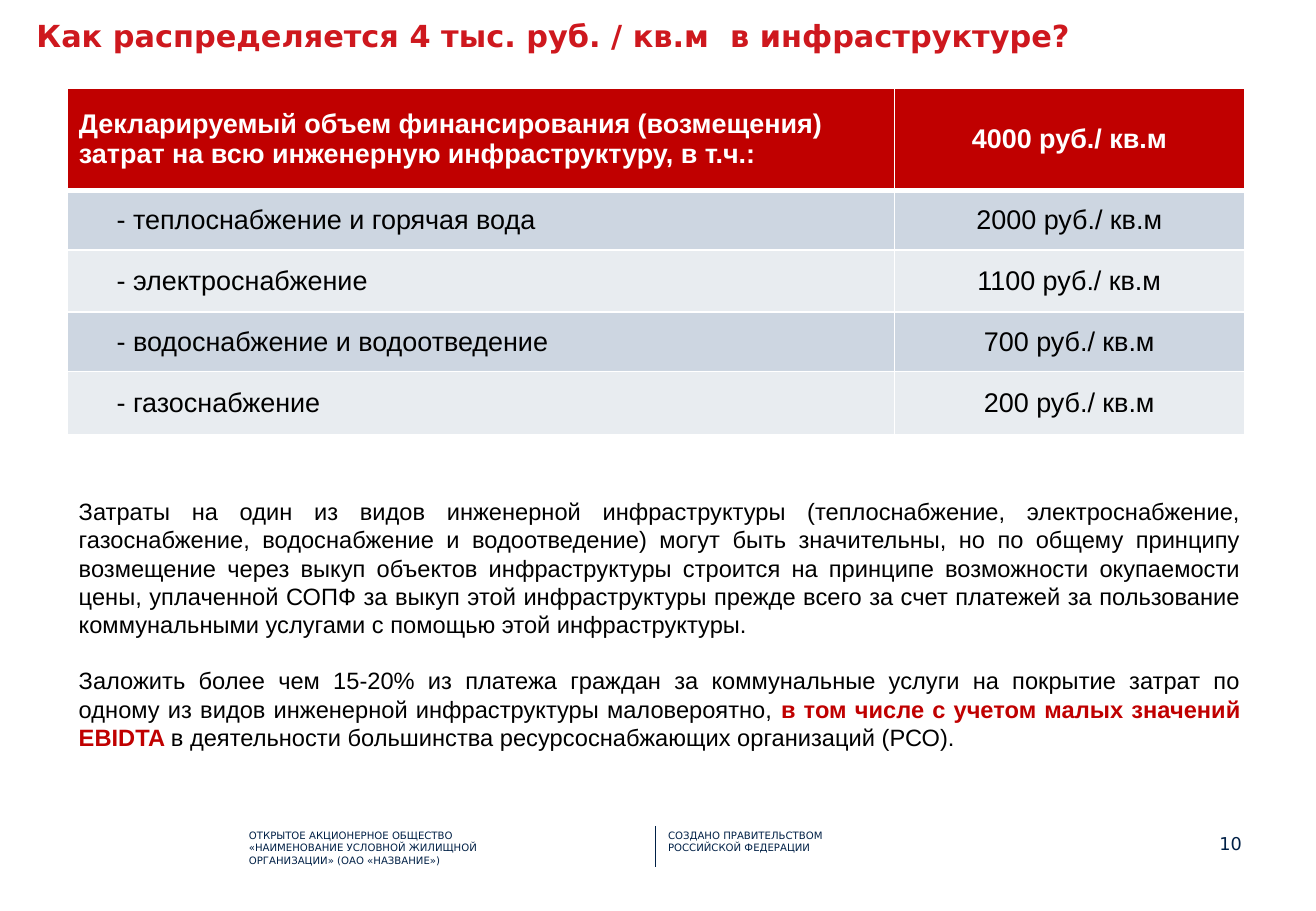
"""Build the slide on how 4 thousand roubles per square metre is split across infrastructure."""
from dataclasses import dataclass

from lxml.etree import SubElement
from pptx import Presentation
from pptx.dml.color import RGBColor
from pptx.enum.shapes import MSO_CONNECTOR
from pptx.enum.text import MSO_ANCHOR, PP_ALIGN as Align
from pptx.oxml.ns import qn
from pptx.util import Emu, Pt

PX = 9144


@dataclass(frozen=True)
class Theme:
    navy: str = "002046"
    title_red: str = "CE181E"
    red: str = "C00000"
    white: str = "FFFFFF"
    black: str = "000000"
    bands: tuple[str, str] = ("CDD6E1", "E8ECF0")
    head_font: str = "DejaVu Sans"
    body_font: str = "Arial"
    title_size: float = 18
    table_size: float = 16
    body_size: float = 14
    number_size: float = 10.5
    footer_size: float = 6


T = Theme()


@dataclass(frozen=True)
class Run:
    text: str
    color: str
    size: float
    font: str = T.head_font
    bold: bool = False


@dataclass(frozen=True)
class TextBox:
    left: int
    top: int
    width: int
    height: int
    paragraphs: tuple[tuple[Run, ...], ...]
    align: Align = Align.LEFT
    inset: tuple[int, int] = (10, 5)
    line_spacing: float = 1.0
    gap: float = 0


@dataclass(frozen=True)
class Row:
    label: str
    amount: str
    height: int


def px(n: int) -> Emu:
    return Emu(n * PX)


def body(text: str, color: str = T.black, bold: bool = False) -> Run:
    return Run(text, color, T.body_size, T.body_font, bold)


def footer(text: str) -> tuple[tuple[Run, ...], ...]:
    return ((Run(text, T.navy, T.footer_size),),)


TEXT_BOXES = (
    TextBox(30, 14, 999, 76, ((Run("Как распределяется 4 тыс. руб. / кв.м  в инфраструктуре?",
                                   T.title_red, T.title_size, bold=True),),), inset=(0, 0)),
    TextBox(55, 404, 976, 222, (
        (body("Затраты на один из видов инженерной инфраструктуры (теплоснабжение, "
              "электроснабжение, газоснабжение, водоснабжение и водоотведение) могут быть "
              "значительны, но по общему принципу возмещение через выкуп объектов "
              "инфраструктуры строится на принципе возможности окупаемости цены, уплаченной "
              "СОПФ за выкуп этой инфраструктуры прежде всего за счет платежей за пользование "
              "коммунальными услугами с помощью этой инфраструктуры."),),
        (body("Заложить более чем 15-20% из платежа граждан за коммунальные услуги на покрытие "
              "затрат по одному из видов инженерной инфраструктуры маловероятно, "),
         body("в том числе с учетом малых значений EBIDTA ", T.red, True),
         body("в деятельности большинства ресурсоснабжающих организаций (РСО).")),
    ), Align.JUSTIFY, gap=16.5),
    TextBox(195, 677, 245, 42, footer(
        "ОТКРЫТОЕ АКЦИОНЕРНОЕ ОБЩЕСТВО «НАИМЕНОВАНИЕ УСЛОВНОЙ ЖИЛИЩНОЙ "
        "ОРГАНИЗАЦИИ» (ОАО «НАЗВАНИЕ»)"), line_spacing=1.05),
    TextBox(540, 677, 196, 31, footer("СОЗДАНО ПРАВИТЕЛЬСТВОМ РОССИЙСКОЙ ФЕДЕРАЦИИ"),
            line_spacing=1.05),
    TextBox(968, 686, 54, 27, ((Run("10", T.navy, T.number_size),),), Align.RIGHT, (0, 0)),
)

COLUMNS = (681, 288)
ROWS = (
    Row("Декларируемый объем финансирования (возмещения) затрат на всю инженерную "
        "инфраструктуру, в т.ч.:", "4000 руб./ кв.м", 84),
    Row("- теплоснабжение и горячая вода", "2000 руб./ кв.м", 49),
    Row("- электроснабжение", "1100 руб./ кв.м", 51),
    Row("- водоснабжение и водоотведение", "700 руб./ кв.м", 49),
    Row("- газоснабжение", "200 руб./ кв.м", 52),
)


def add_run(p, run: Run) -> None:
    r = p.add_run()
    r.text = run.text
    r.font.name = run.font
    r.font.size = Pt(run.size)
    r.font.bold = run.bold
    r.font.color.rgb = RGBColor.from_string(run.color)


def add_text_box(slide, box: TextBox) -> None:
    tf = slide.shapes.add_textbox(px(box.left), px(box.top), px(box.width), px(box.height)).text_frame
    tf.word_wrap = True
    tf.margin_left = tf.margin_right = px(box.inset[0])
    tf.margin_top = tf.margin_bottom = px(box.inset[1])
    for i, runs in enumerate(box.paragraphs):
        p = tf.add_paragraph() if i else tf.paragraphs[0]
        p.alignment = box.align
        p.line_spacing = box.line_spacing
        if i:
            p.space_before = Pt(box.gap)
        for run in runs:
            add_run(p, run)


def add_borders(cell, top: float, bottom: float) -> None:
    tc_pr = cell._tc.get_or_add_tcPr()
    for side, width in (("L", 1), ("R", 1), ("T", top), ("B", bottom)):
        ln = SubElement(tc_pr, qn(f"a:ln{side}"), w=str(Pt(width)))
        SubElement(SubElement(ln, qn("a:solidFill")), qn("a:srgbClr"), val=T.white)


def add_cost_table(slide, left: int, top: int) -> None:
    height = sum(row.height for row in ROWS)
    table = slide.shapes.add_table(len(ROWS), len(COLUMNS), px(left), px(top),
                                   px(sum(COLUMNS)), px(height)).table
    for column, width in zip(table.columns, COLUMNS):
        column.width = px(width)
    for i, row in enumerate(ROWS):
        table.rows[i].height = px(row.height)
        header = i == 0
        fill = T.red if header else T.bands[(i - 1) % 2]
        color = T.white if header else T.black
        for j, text in enumerate((row.label, row.amount)):
            cell = table.cell(i, j)
            add_borders(cell, 3 if i == 1 else 1, 3 if header else 1)
            cell.fill.solid()
            cell.fill.fore_color.rgb = RGBColor.from_string(fill)
            cell.vertical_anchor = MSO_ANCHOR.MIDDLE
            cell.margin_left = px(10 if header or j else 41)
            p = cell.text_frame.paragraphs[0]
            p.alignment = Align.CENTER if j else Align.LEFT
            add_run(p, Run(text, color, T.table_size, T.body_font, header))


def add_footer_divider(slide, x: int, top: int, bottom: int) -> None:
    line = slide.shapes.add_connector(MSO_CONNECTOR.STRAIGHT, px(x), px(top), px(x), px(bottom))
    line.line.color.rgb = RGBColor.from_string(T.navy)
    line.line.width = Pt(0.5)
    SubElement(line._element.spPr, qn("a:effectLst"))


def main() -> None:
    prs = Presentation()
    prs.slide_width, prs.slide_height = px(1083), px(750)
    slide = prs.slides.add_slide(prs.slide_layouts[6])
    for box in TEXT_BOXES:
        add_text_box(slide, box)
    add_footer_divider(slide, 539, 680, 714)
    add_cost_table(slide, 55, 73)
    prs.save("out.pptx")


if __name__ == "__main__":
    main()
